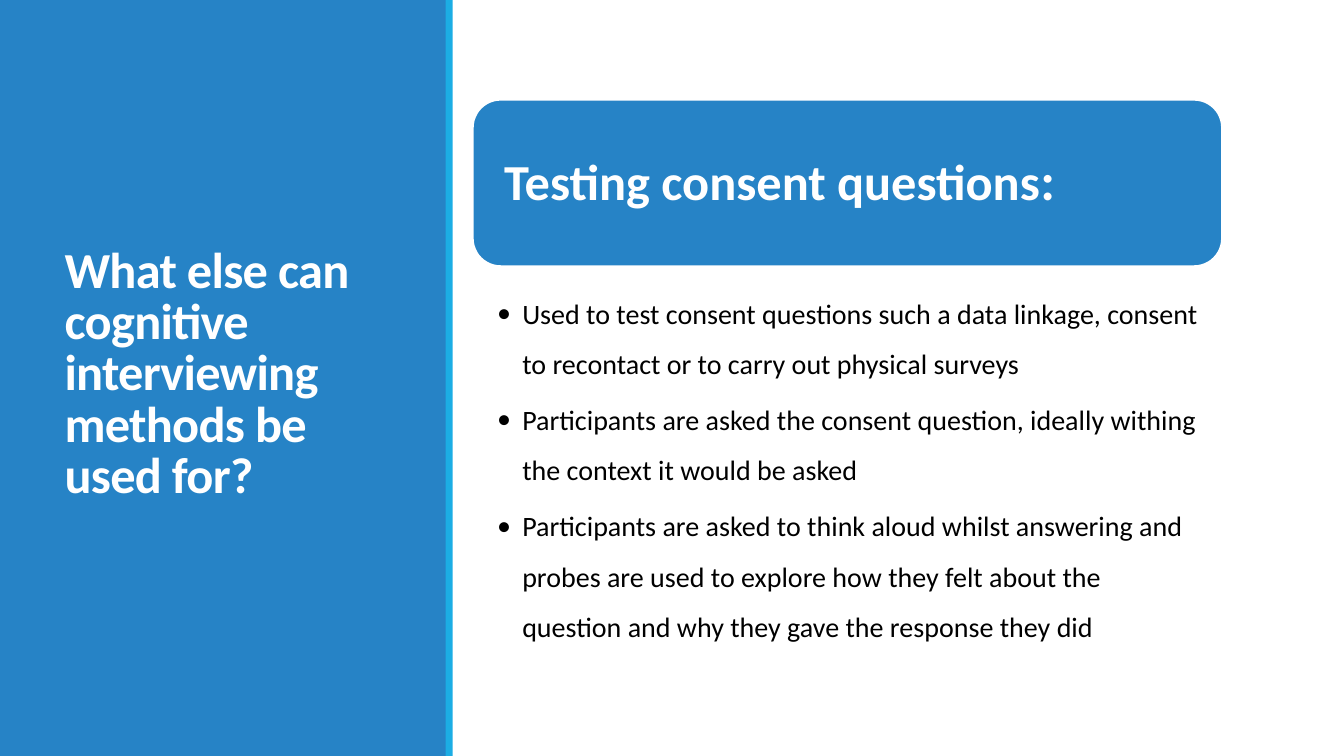
"""Build the slide on testing consent questions with cognitive interviewing."""
from lxml import etree
from pptx import Presentation
from pptx.dml.color import RGBColor
from pptx.enum.shapes import MSO_SHAPE
from pptx.enum.text import MSO_ANCHOR, MSO_AUTO_SIZE, PP_ALIGN
from pptx.oxml.ns import qn
from pptx.util import Inches, Pt

RECTANGLE, ROUNDED = MSO_SHAPE.RECTANGLE, MSO_SHAPE.ROUNDED_RECTANGLE
MIDDLE, TOP = MSO_ANCHOR.MIDDLE, MSO_ANCHOR.TOP
LEFT, NO_FIT = PP_ALIGN.LEFT, MSO_AUTO_SIZE.NONE
BLUE, CYAN, WHITE, BLACK = "2683C6", "1CADE4", "FFFFFF", "000000"
WIDTH, HEIGHT = 13.33, 7.5
CONTENT_LEFT, CONTENT_WIDTH = 4.69, 7.43
BULLETS = [
    "Used to test consent questions such a data linkage, consent to recontact or to carry out physical surveys",
    "Participants are asked the consent question, ideally withing the context it would be asked",
    "Participants are asked to think aloud whilst answering and probes are used to explore how they felt "
    "about the question and why they gave the response they did",
]


def color(value):
    return RGBColor.from_string(value)


def write(box, paragraphs, anchor, margins, spacing, after, ink, bold):
    frame = box.text_frame
    left, top, right, bottom = map(Inches, margins)
    settings = {"word_wrap": True, "auto_size": NO_FIT, "vertical_anchor": anchor,
                "margin_left": left, "margin_top": top, "margin_right": right, "margin_bottom": bottom}
    for name, value in settings.items():
        setattr(frame, name, value)
    for index, runs in enumerate(paragraphs):
        para = frame.add_paragraph() if index else frame.paragraphs[0]
        para.alignment, para.line_spacing, para.space_after = LEFT, spacing, Pt(after)
        para.space_before = Pt(0)
        for text, size in runs:
            span = para.add_run()
            span.text = text
            for name, value in {"name": "Calibri", "size": Pt(size), "bold": bold}.items():
                setattr(span.font, name, value)
            span.font.color.rgb = color(ink)
    return frame


deck = Presentation()
deck.slide_width, deck.slide_height = Inches(WIDTH), Inches(HEIGHT)
page = deck.slides.add_slide(deck.slide_layouts[5])
page.background.fill.solid()
page.background.fill.fore_color.rgb = color(WHITE)

panels = [
    (RECTANGLE, 0, 0, 4.43, HEIGHT, BLUE),
    (RECTANGLE, 4.42, 0, 0.07, HEIGHT, CYAN),
    (ROUNDED, CONTENT_LEFT, 0.99, CONTENT_WIDTH, 1.65, BLUE),
]
for kind, left, top, width, height, fill in panels:
    panel = page.shapes.add_shape(kind, Inches(left), Inches(top), Inches(width), Inches(height))
    panel.shadow.inherit = False
    panel.fill.solid()
    panel.fill.fore_color.rgb = color(fill)
    panel.line.fill.background()
heading = panel
heading.line.color.rgb = color(WHITE)
heading.line.width = Pt(1.25)
write(heading, [[("Testing consent questions", 36), (":", 38)]], MIDDLE,
      (0.23, 0.23, 0.23, 0.23), 0.9, 0, WHITE, True)

title = page.shapes.title
title.left, title.top, title.width, title.height = map(Inches, (0.54, 0.57, 3.37, 6.31))
frame = write(title, [[("What else can cognitive interviewing methods be used for?", 36)]], MIDDLE,
              (0.1, 0.05, 0.1, 0.05), 0.85, 0, WHITE, True)
frame.paragraphs[0].runs[0].font._element.set("spc", "-50")
title.element.getparent().append(title.element)

body = page.shapes.add_textbox(*map(Inches, (CONTENT_LEFT, 2.74, CONTENT_WIDTH, 3.75)))
frame = write(body, [[(text, 20)] for text in BULLETS], TOP,
              (0.24, 0.03, 0.16, 0.03), 1.5, 4, BLACK, False)
for para in frame.paragraphs:
    properties = para._p.get_or_add_pPr()
    properties.set("marL", str(Inches(0.25)))
    properties.set("indent", str(-Inches(0.25)))
    etree.SubElement(properties, qn("a:buFont")).set("typeface", "Calibri")
    etree.SubElement(properties, qn("a:buChar")).set("char", "•")

deck.save("out.pptx")
